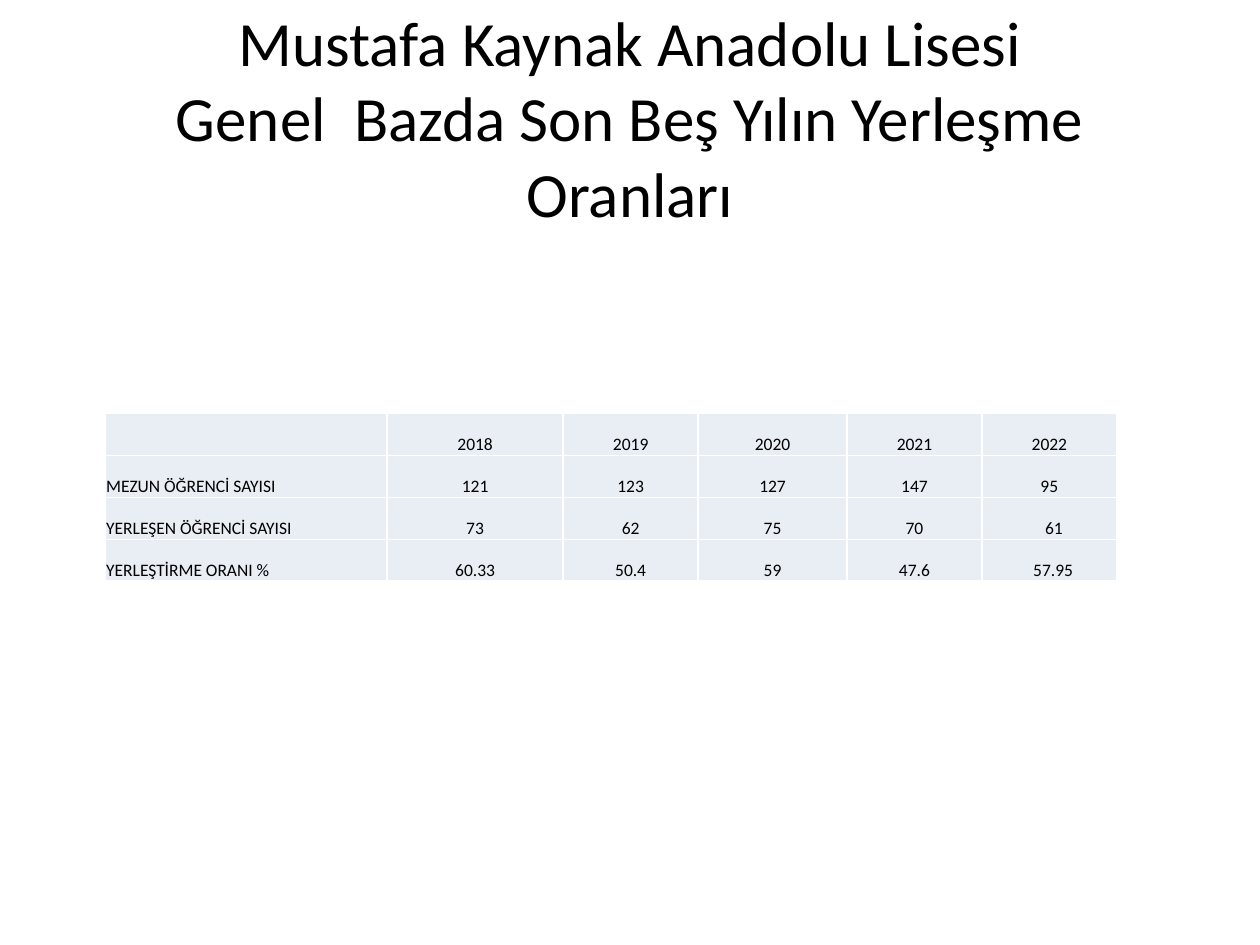
from lxml.etree import SubElement
from pptx import Presentation
from pptx.dml.color import RGBColor
from pptx.enum.text import MSO_ANCHOR, PP_ALIGN
from pptx.oxml.ns import qn
from pptx.util import Pt

FONT = "Calibri"
BLACK, WHITE, PALE_BLUE = "000000", "FFFFFF", "E9EDF4"
TITLE = "Mustafa Kaynak Anadolu Lisesi\vGenel  Bazda Son Beş Yılın Yerleşme Oranları"
ROWS = [
    ["", "2018", "2019", "2020", "2021", "2022"],
    ["MEZUN ÖĞRENCİ SAYISI", "121", "123", "127", "147", "95"],
    ["YERLEŞEN ÖĞRENCİ SAYISI", "73", "62", "75", "70", "61"],
    ["YERLEŞTİRME ORANI %", "60.33", "50.4", "59", "47.6", "57.95"],
]
COL_WIDTHS = [161.2, 100.6, 77.2, 85, 77.2, 77]


def color(hex_value):
    return RGBColor.from_string(hex_value)


def style_text(tf, size, align):
    for p in tf.paragraphs:
        p.alignment = align
        for r in p.runs:
            r.font.name = FONT
            r.font.size = Pt(size)
            r.font.color.rgb = color(BLACK)


def add_borders(cell, hex_value, width):
    tcPr = cell._tc.get_or_add_tcPr()
    for i, side in enumerate(("lnL", "lnR", "lnT", "lnB")):
        ln = SubElement(tcPr, qn(f"a:{side}"), w=str(Pt(width)))
        fill = SubElement(ln, qn("a:solidFill"))
        SubElement(fill, qn("a:srgbClr"), val=hex_value)
        # Border lines come before the cell fill
        tcPr.remove(ln)
        tcPr.insert(i, ln)


def add_title(slide, left, top, width, height):
    tf = slide.shapes.add_textbox(Pt(left), Pt(top), Pt(width), Pt(height)).text_frame
    tf.word_wrap = True
    tf.vertical_anchor = MSO_ANCHOR.MIDDLE
    tf.text = TITLE
    style_text(tf, 36, PP_ALIGN.CENTER)


def add_rates_table(slide, left, top, width, height):
    frame = slide.shapes.add_table(len(ROWS), len(COL_WIDTHS), Pt(left), Pt(top), Pt(width), Pt(height))
    table = frame.table
    for column, share in zip(table.columns, COL_WIDTHS):
        column.width = Pt(width * share / sum(COL_WIDTHS))
    for i, values in enumerate(ROWS):
        table.rows[i].height = Pt(height / len(ROWS))
        for j, value in enumerate(values):
            cell = table.cell(i, j)
            cell.fill.solid()
            cell.fill.fore_color.rgb = color(PALE_BLUE)
            add_borders(cell, WHITE, 1)
            cell.margin_left = cell.margin_right = cell.margin_top = Pt(0.7)
            cell.margin_bottom = 0
            cell.vertical_anchor = MSO_ANCHOR.BOTTOM
            cell.text = value
            style_text(cell.text_frame, 10, PP_ALIGN.CENTER if j else PP_ALIGN.LEFT)
    # The last two figures for 2022 sit a little right of centre
    for i, indent in ((2, 6), (3, 5)):
        table.cell(i, len(COL_WIDTHS) - 1).margin_left = Pt(indent)


def main():
    prs = Presentation()
    prs.slide_width, prs.slide_height = Pt(720), Pt(540)
    slide = prs.slides.add_slide(prs.slide_layouts[6])
    add_title(slide, 36, 21.6, 648, 90)
    add_rates_table(slide, 60, 236.2, 578.2, 96)
    prs.save("out.pptx")


if __name__ == "__main__":
    main()
